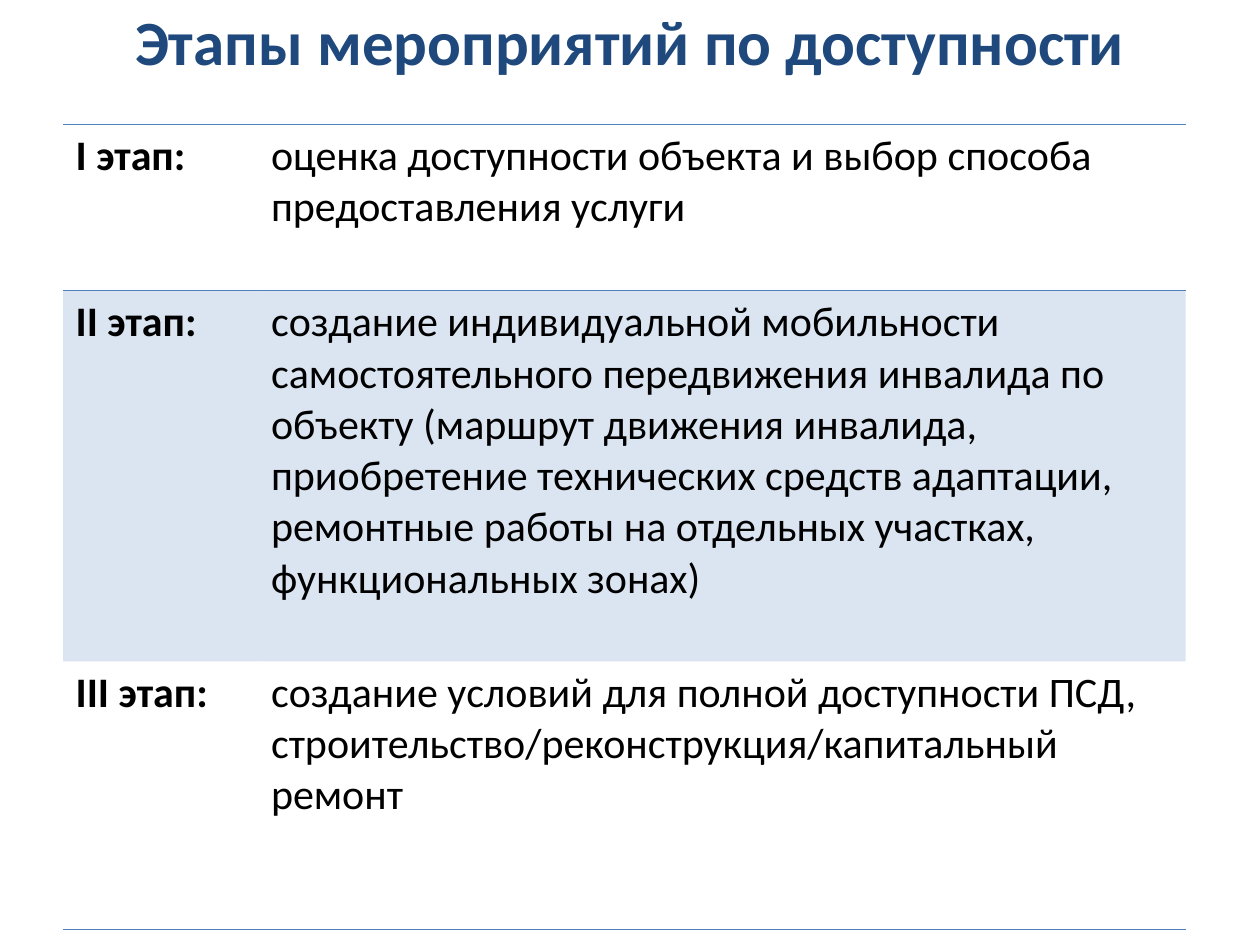
from lxml import etree
from pptx import Presentation
from pptx import util as u
from pptx.dml import color
from pptx.enum import text
from pptx.oxml import ns

COLORS = {"title": "1F497D", "body": "000000", "accent": "4F81BD"}
FONT = "Calibri"
PLAIN_STYLE = "{2D5ABB26-0587-4C30-8999-92F81FD0307C}"
COLUMN_WIDTHS = [3.94, 18.69]
ROW_HEIGHTS = [3.35, 7.47, 5.41]
STAGES = [
    ("I этап:", "оценка доступности объекта и выбор способа предоставления услуги"),
    ("II этап:", "создание индивидуальной мобильности самостоятельного передвижения "
     "инвалида по объекту (маршрут движения инвалида, приобретение технических "
     "средств адаптации, ремонтные работы на отдельных участках, функциональных зонах)"),
    ("III этап:", "создание условий для полной доступности ПСД, "
     "строительство/реконструкция/капитальный ремонт"),
]
ROW_BORDERS = [("lnT", "lnB"), (), ("lnB",)]
SHADED_ROW = 1


def write_text(frame, words, size=24, shade="body", bold=False,
               align=text.PP_ALIGN.LEFT):
    para = frame.paragraphs[0]
    para.alignment = align
    span = para.add_run()
    span.text = words
    span.font.name = FONT
    span.font.size = u.Pt(size)
    span.font.bold = bold
    span.font.color.rgb = color.RGBColor.from_string(COLORS[shade])


def add_title(page, words):
    box = page.shapes.add_textbox(u.Cm(1.27), u.Cm(-0.28), u.Cm(22.86), u.Cm(2.18))
    box.text_frame.word_wrap = True
    box.text_frame.vertical_anchor = text.MSO_ANCHOR.MIDDLE
    write_text(box.text_frame, words, size=36, shade="title", bold=True,
               align=text.PP_ALIGN.CENTER)


def add_border(cell, side):
    properties = cell._tc.get_or_add_tcPr()
    line = etree.SubElement(properties, ns.qn(f"a:{side}"), w=str(u.Pt(1)))
    fill = etree.SubElement(line, ns.qn("a:solidFill"))
    etree.SubElement(fill, ns.qn("a:srgbClr"), val=COLORS["accent"])


def shade_cell(cell, percent):
    cell.fill.solid()
    cell.fill.fore_color.rgb = color.RGBColor.from_string(COLORS["accent"])
    tint = cell._tc.tcPr.find(".//" + ns.qn("a:solidFill") + "/" + ns.qn("a:srgbClr"))
    etree.SubElement(tint, ns.qn("a:alpha"), val=str(percent * 1000))


def add_stage_table(page):
    frame = page.shapes.add_table(
        len(STAGES), len(COLUMN_WIDTHS), u.Cm(1.27), u.Cm(2.51),
        u.Cm(sum(COLUMN_WIDTHS)), u.Cm(sum(ROW_HEIGHTS)))
    table = frame.table
    table.first_row = False
    table.horz_banding = False
    table._tbl.tblPr.find(ns.qn("a:tableStyleId")).text = PLAIN_STYLE
    for column, width in zip(table.columns, COLUMN_WIDTHS):
        column.width = u.Cm(width)
    for index, (row, height) in enumerate(zip(table.rows, ROW_HEIGHTS)):
        row.height = u.Cm(height)
        for position, (cell, words) in enumerate(zip(row.cells, STAGES[index])):
            write_text(cell.text_frame, words, bold=position == 0)
            for side in ROW_BORDERS[index]:
                add_border(cell, side)
            if index == SHADED_ROW:
                shade_cell(cell, 20)
            else:
                cell.fill.background()


def main():
    deck = Presentation()
    deck.slide_width, deck.slide_height = u.Cm(25.4), u.Cm(19.05)
    page = deck.slides.add_slide(deck.slide_layouts[6])
    add_title(page, "Этапы мероприятий по доступности")
    add_stage_table(page)
    deck.save("out.pptx")


if __name__ == "__main__":
    main()
